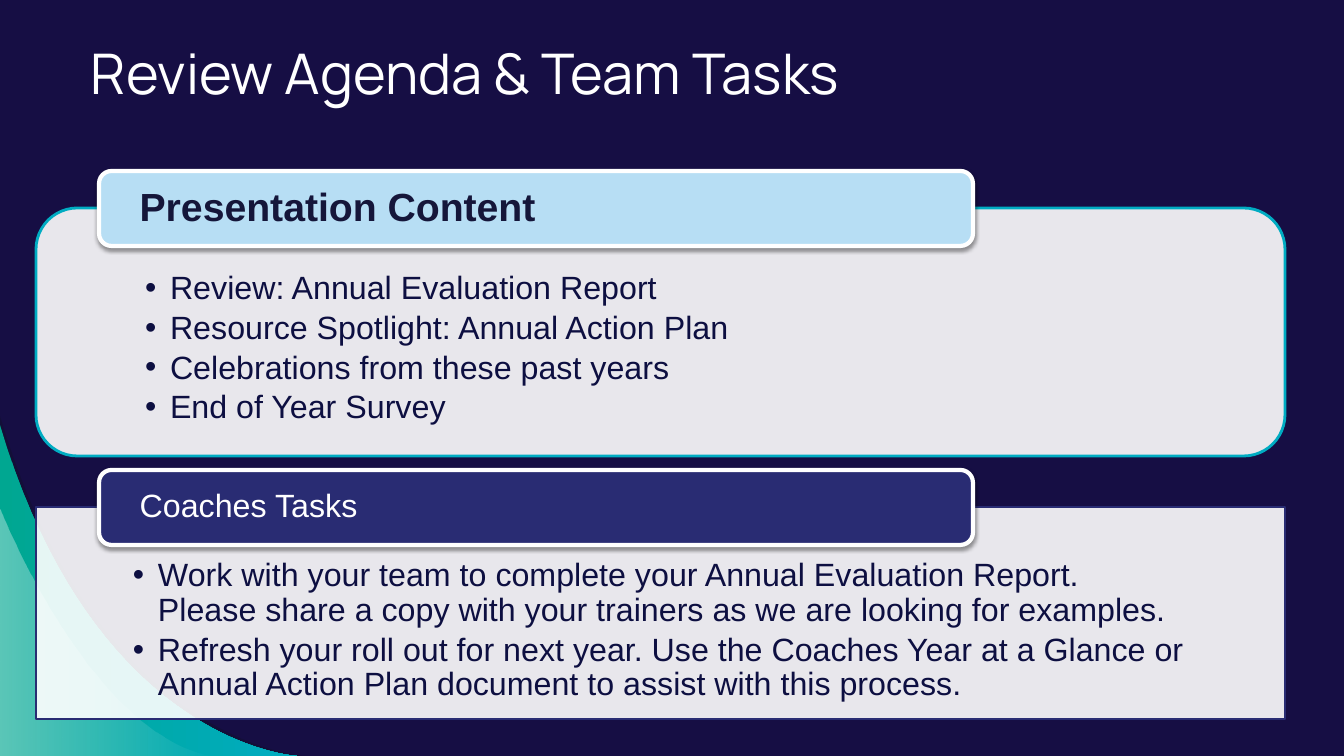
import pptx
import pptx.util
import pptx.dml.color
import pptx.enum.shapes
import pptx.enum.text
import pptx.oxml
import pptx.oxml.ns

PX = 914400 / 100.8
COLORS = {
    "background": "160E44", "shade": "12102F", "cyan": "00ACC2", "green": "00A791",
    "white": "FFFFFF", "sky": "B7DEF4", "indigo": "292C73", "body": "0D0F41",
    "heading": "15163A", "shadow": "000000",
}
SHAPES = pptx.enum.shapes.MSO_SHAPE
ANCHORS = pptx.enum.text.MSO_ANCHOR
CONTENT = [
    "Review: Annual Evaluation Report",
    "Resource Spotlight: Annual Action Plan",
    "Celebrations from these past years",
    "End of Year Survey",
]
TASKS = [
    "Work with your team to complete your Annual Evaluation Report. "
    "Please share a copy with your trainers as we are looking for examples.",
    "Refresh your roll out for next year. Use the Coaches Year at a Glance or "
    "Annual Action Plan document to assist with this process.",
]


def px(length):
    """Turn pixels into EMU."""
    return pptx.util.Emu(round(length * PX))


def rgb(name):
    """Look up a named colour."""
    return pptx.dml.color.RGBColor.from_string(COLORS[name])


def add_xml(parent, body):
    """Append one drawing element given as XML text."""
    namespace = pptx.oxml.ns.nsdecls("a")
    tag, rest = body.split(" ", 1)
    parent.append(pptx.oxml.parse_xml(f"{tag} {namespace} {rest}"))


def set_opacity(shape, *percents):
    """Give the fill colours of a shape their opacity, in order."""
    colors = shape.element.spPr.iter(pptx.oxml.ns.qn("a:srgbClr"))
    for color, percent in zip(colors, percents):
        add_xml(color, f'<a:alpha val="{percent * 1000}"/>')


def place(shape, box):
    """Move a shape to a box and bring it to the front."""
    shape.left, shape.top, shape.width, shape.height = map(px, box)
    shape.element.getparent().append(shape.element)


def write_text(shape, lines, size, color, font="Arial", bold=False, bullet=False,
               insets=(0, 0, 0, 0), anchor=ANCHORS.MIDDLE, spacing=0.9, after=0):
    """Fill a shape with formatted paragraphs."""
    frame = shape.text_frame
    frame.word_wrap = True
    frame.auto_size = pptx.enum.text.MSO_AUTO_SIZE.NONE
    frame.vertical_anchor = anchor
    (frame.margin_left, frame.margin_top,
     frame.margin_right, frame.margin_bottom) = map(px, insets)
    frame.text = "\n".join(lines)
    for paragraph in frame.paragraphs:
        paragraph.alignment = pptx.enum.text.PP_ALIGN.LEFT
        paragraph.line_spacing = spacing
        paragraph.space_before = pptx.util.Pt(0)
        paragraph.space_after = pptx.util.Pt(after)
        run_font = paragraph.runs[0].font
        run_font.name, run_font.size, run_font.bold = font, pptx.util.Pt(size), bold
        run_font.color.rgb = rgb(color)
        if bullet:
            properties = paragraph.runs[0].font and paragraph._p.get_or_add_pPr()
            properties.set("marL", str(px(25)))
            properties.set("indent", str(px(-25)))
            add_xml(properties, '<a:buFont typeface="Arial"/>')
            add_xml(properties, '<a:buChar char="•"/>')


def add_box(slide, kind, box, fill, line, width):
    """Add a filled and outlined shape without a shadow."""
    shape = slide.shapes.add_shape(kind, *map(px, box))
    shape.shadow.inherit = False
    shape.fill.solid()
    shape.fill.fore_color.rgb = rgb(fill)
    shape.line.color.rgb = rgb(line)
    shape.line.width = pptx.util.Pt(width)
    return shape


def add_swoosh(slide, box, bend_one, bend_two, colors, opacities):
    """Add a corner shape whose upper edge is a cubic curve across the box."""
    left, top, width, height = box
    knots = [(0, 0), bend_one, bend_two, (1, 1)]
    points = []
    for step in range(41):
        t = step / 40
        weights = [(1 - t) ** 3, 3 * t * (1 - t) ** 2, 3 * t * t * (1 - t), t ** 3]
        x = sum(weight * knot[0] for weight, knot in zip(weights, knots))
        y = sum(weight * knot[1] for weight, knot in zip(weights, knots))
        points.append((px(left + x * width), px(top + y * height)))
    builder = slide.shapes.build_freeform(*points[0], scale=1.0)
    builder.add_line_segments(points[1:] + [(px(left), px(top + height))], close=True)
    shape = builder.convert_to_shape()
    shape.shadow.inherit = False
    shape.line.fill.background()
    if len(colors) == 1:
        shape.fill.solid()
        shape.fill.fore_color.rgb = rgb(colors[0])
    else:
        shape.fill.gradient()
        shape.fill.gradient_angle = 0
        for stop, color, position in zip(shape.fill.gradient_stops, colors, (0, 1)):
            stop.color.rgb = rgb(color)
            stop.position = position
    set_opacity(shape, *opacities)


def add_corner(slide, bottom):
    """Draw the layered curves in the lower left corner."""
    add_swoosh(slide, (0, bottom - 340, 305, 340), (0.32, 0.97), (1, 1), ["shade"], [54])
    add_swoosh(slide, (0, bottom - 331, 297, 331), (0.32, 0.97), (1, 1),
               ["green", "cyan"], [100, 100])
    add_swoosh(slide, (0, bottom - 246, 218, 246), (0, 0), (0.42, 0.94),
               ["white", "white"], [36, 0])


def add_section(slide, box, kind, line, body, body_inset, items, heading, tab_fill, **style):
    """Add a panel with its list and a heading tab over its top edge."""
    left, top, width, height = box
    panel = add_box(slide, kind, box, "white", line, 2)
    set_opacity(panel, 90)
    place(body, (left + body_inset, top + body_inset,
                 width - 2 * body_inset, height - 2 * body_inset))
    write_text(body, items, 23, "body", bullet=True, insets=(97, 52, 97, 18),
               anchor=ANCHORS.TOP, after=3.5)
    tab = add_box(slide, SHAPES.ROUNDED_RECTANGLE, (left + 63, top - 37, 874, 75),
                  tab_fill, "white", 3)
    effects = tab.element.spPr.find(pptx.oxml.ns.qn("a:effectLst"))
    add_xml(effects, '<a:outerShdw blurRad="39370" dist="20320" dir="5400000" rotWithShape="0">'
            f'<a:srgbClr val="{COLORS["shadow"]}"><a:alpha val="38000"/></a:srgbClr>'
            '</a:outerShdw>')
    write_text(tab, [heading], insets=(37, 0, 37, 0), **style)


def add_title(title, box):
    """Place and format the slide title."""
    place(title, box)
    write_text(title, ["Review Agenda & Team Tasks"], 40, "white", font="Manrope",
               insets=(10, 10, 10, 10), spacing=1.0)


def main():
    """Build the agenda slide and save it."""
    presentation = pptx.Presentation()
    presentation.slide_width, presentation.slide_height = px(1344), px(756)
    slide = presentation.slides.add_slide(presentation.slide_layouts[3])
    slide.background.fill.solid()
    slide.background.fill.fore_color.rgb = rgb("background")
    title, content, tasks = slide.placeholders
    add_corner(slide, 756)
    add_section(slide, (36, 208, 1249, 248), SHAPES.ROUNDED_RECTANGLE, "cyan", content, 12,
                CONTENT, "Presentation Content", "sky", size=28, color="heading", bold=True)
    add_section(slide, (36, 507, 1249, 212), SHAPES.RECTANGLE, "indigo", tasks, 0,
                TASKS, "Coaches Tasks", "indigo", size=23, color="white")
    add_title(title, (81, 26, 1034, 93))
    presentation.save("out.pptx")


if __name__ == "__main__":
    main()
